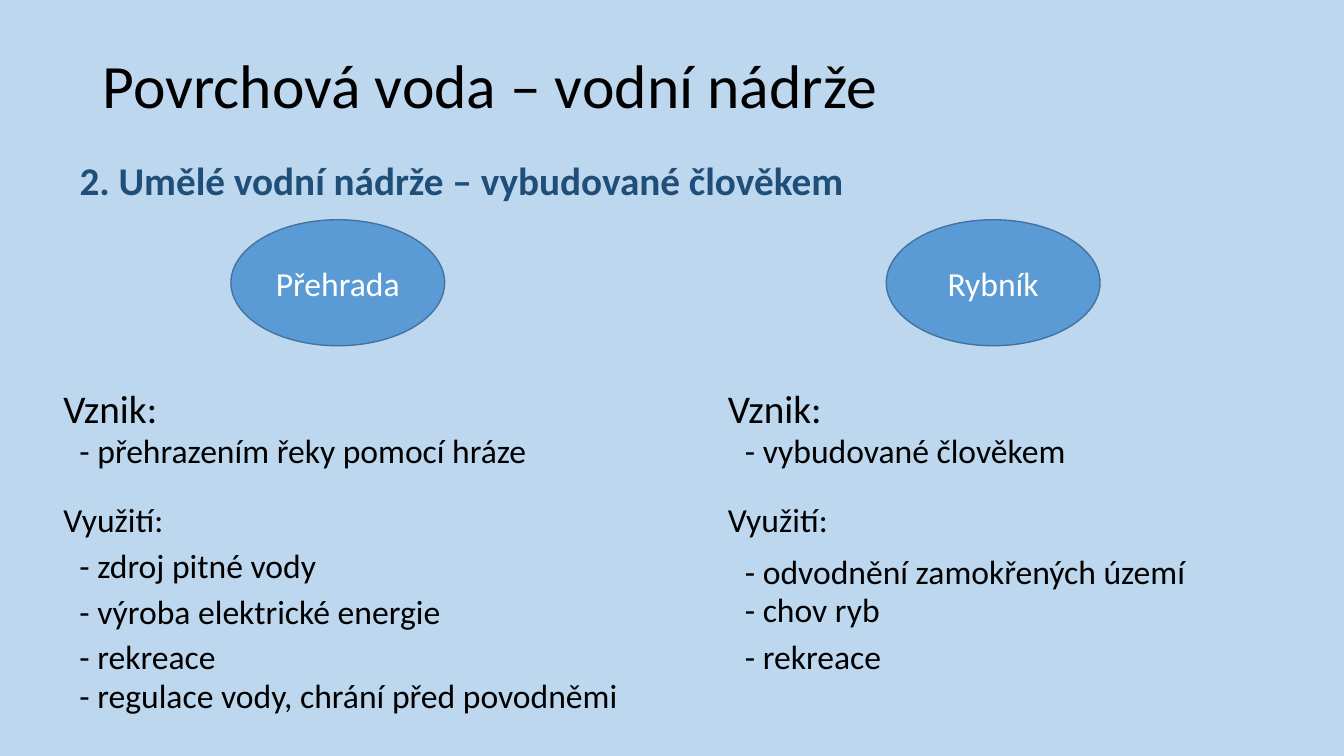
from dataclasses import dataclass

from pptx import Presentation
from pptx.dml.color import RGBColor
from pptx.enum.shapes import MSO_SHAPE
from pptx.enum.text import MSO_ANCHOR, PP_ALIGN
from pptx.util import Inches, Pt


@dataclass(frozen=True)
class Theme:
    font: str = "Calibri"
    background: RGBColor = RGBColor(0xBD, 0xD7, 0xEE)
    text: RGBColor = RGBColor(0, 0, 0)
    accent: RGBColor = RGBColor(0x1F, 0x4E, 0x79)
    fill: RGBColor = RGBColor(0x5B, 0x9B, 0xD5)
    line: RGBColor = RGBColor(0x43, 0x73, 0x9E)
    light: RGBColor = RGBColor(0xFF, 0xFF, 0xFF)
    title: int = 44
    heading: int = 28
    body: int = 24


theme = Theme()


def add_text(s, text, x, y, w, h, size=theme.body, color=theme.text, bold=False,
             anchor=MSO_ANCHOR.TOP, spacing=None, before=None, oval=False):
    box = [Inches(v) for v in (x, y, w, h)]
    if oval:
        sp = s.shapes.add_shape(MSO_SHAPE.OVAL, *box)
        sp.shadow.inherit = False
        sp.fill.solid()
        sp.fill.fore_color.rgb = theme.fill
        sp.line.color.rgb = theme.line
        sp.line.width = Pt(1)
    else:
        sp = s.shapes.add_textbox(*box)
    tf = sp.text_frame
    tf.word_wrap = True
    tf.vertical_anchor = anchor
    p = tf.paragraphs[0]
    p.alignment = PP_ALIGN.CENTER if oval else PP_ALIGN.LEFT
    p.line_spacing = spacing
    if before is not None:
        p.space_before = Pt(before)
    r = p.add_run()
    r.text = text
    r.font.name = theme.font
    r.font.size = Pt(size)
    r.font.bold = bold
    r.font.color.rgb = color


prs = Presentation()
prs.slide_width = Inches(13.33)
prs.slide_height = Inches(7.5)
s = prs.slides.add_slide(prs.slide_layouts[6])
s.background.fill.solid()
s.background.fill.fore_color.rgb = theme.background

add_text(s, "Povrchová voda – vodní nádrže", 0.92, 0.4, 11.5, 0.95,
         size=theme.title, anchor=MSO_ANCHOR.MIDDLE, spacing=0.9)
add_text(s, "2. Umělé vodní nádrže – vybudované člověkem", 0.69, 1.5, 9.02, 0.57,
         size=theme.heading, color=theme.accent, bold=True)

columns = [
    ("Přehrada", 2.29, 0.53, 0.69, [
        ("- přehrazením řeky pomocí hráze", 4.22),
        ("- zdroj pitné vody", 5.36),
        ("- výroba elektrické energie", 5.81),
        ("- rekreace", 6.26),
        ("- regulace vody, chrání před povodněmi", 6.65),
    ]),
    ("Rybník", 8.79, 7.12, 7.29, [
        ("- vybudované člověkem", 4.22),
        ("- odvodnění zamokřených území", 5.42),
        ("- chov ryb", 5.79),
        ("- rekreace", 6.26),
    ]),
]
labels = [("Vznik:", 3.82, theme.heading), ("Využití:", 4.95, theme.body)]

for name, oval_x, label_x, item_x, items in columns:
    add_text(s, name, oval_x, 2.18, 2.12, 1.25, color=theme.light,
             anchor=MSO_ANCHOR.MIDDLE, oval=True)
    for label, y, size in labels:
        add_text(s, label, label_x, y, 4.46, 0.52, size=size, spacing=0.9, before=10)
    for item, y in items:
        add_text(s, item, item_x, y, 5.86, 0.5)

prs.save("out.pptx")
